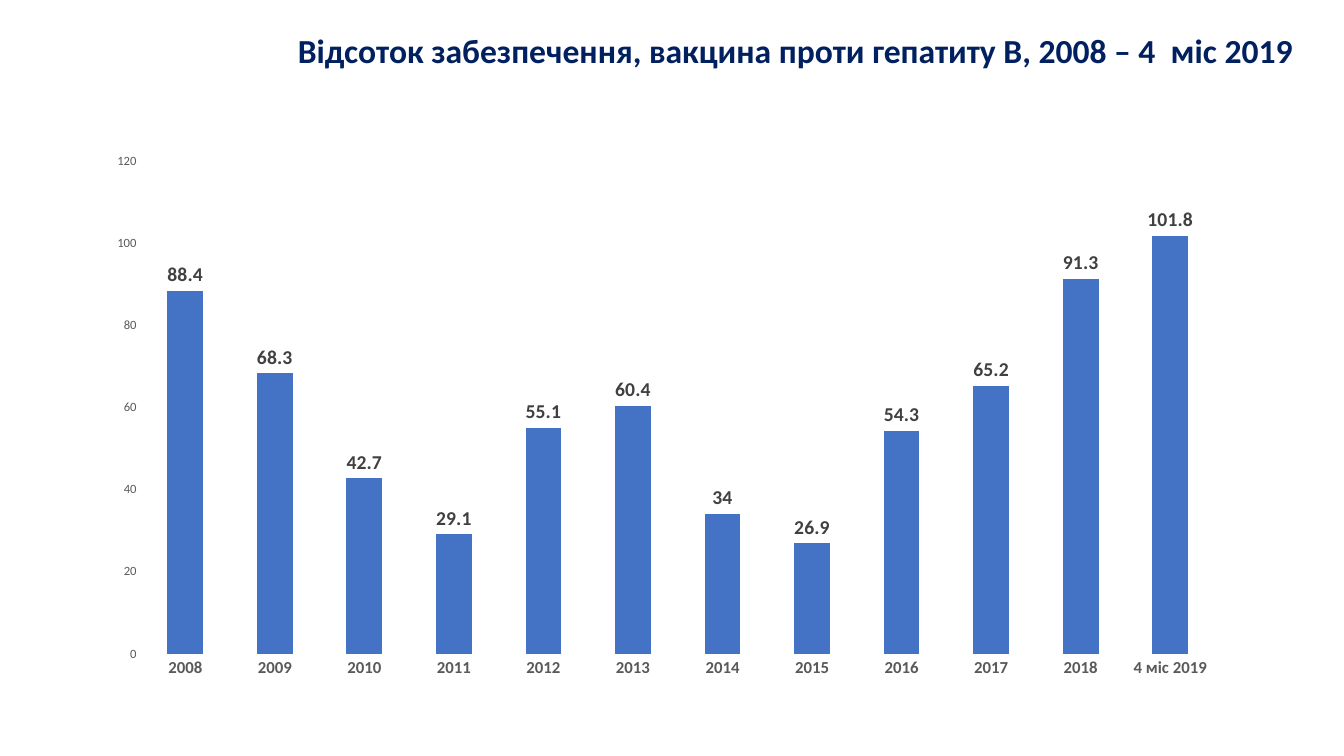
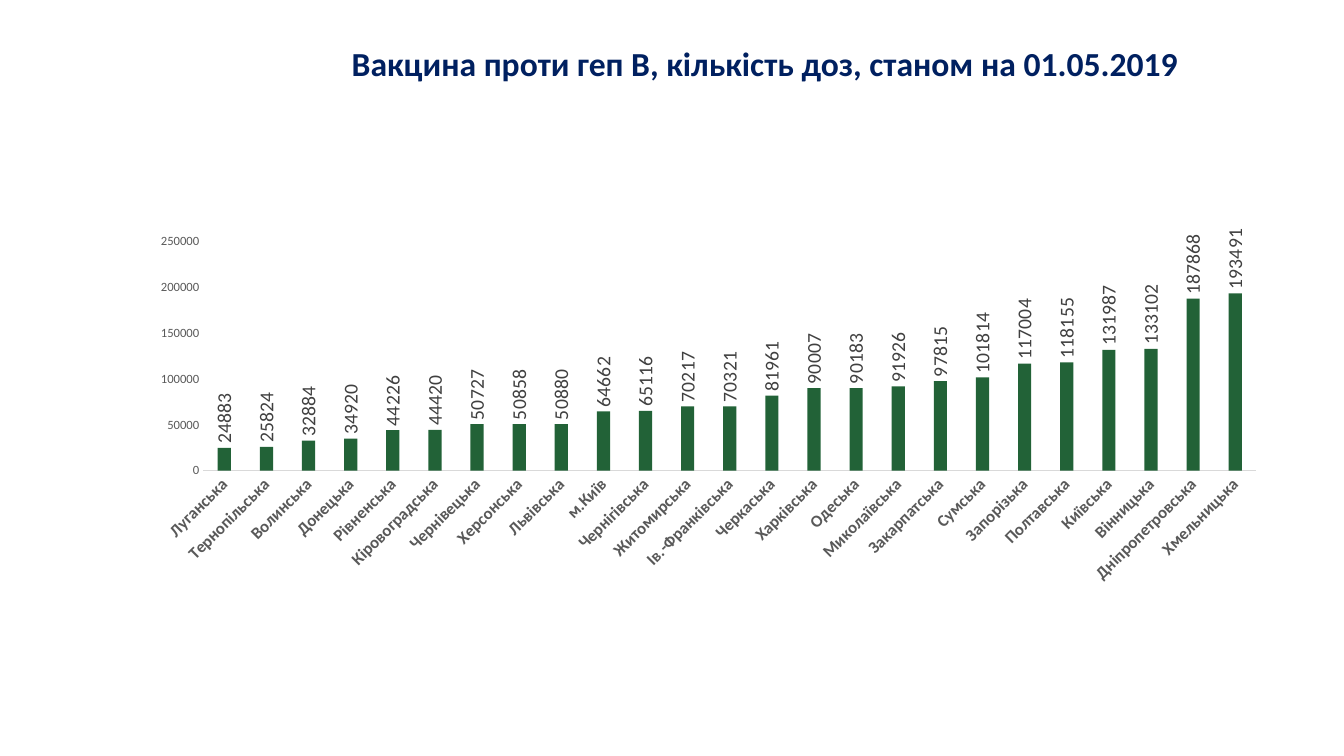
from dataclasses import dataclass

from lxml import etree
from pptx import Presentation
from pptx import util as u
from pptx.chart.data import CategoryChartData
from pptx.dml.color import RGBColor
from pptx.enum import chart as ch
from pptx.enum import text
from pptx.oxml import ns

EMU_PER_PX = 9525
TITLE_ONLY = 5


@dataclass(frozen=True)
class Theme:
    font: str = "Calibri"
    title: str = "002060"
    axis_text: str = "595959"
    label_text: str = "404040"
    axis_line: str = "D9D9D9"
    coverage: str = "4472C4"
    doses: str = "0D5324"
    title_size: int = 24
    label_size: int = 14
    category_size: int = 12
    value_size: int = 9


THEME = Theme()

COVERAGE = {
    "2008": 88.4, "2009": 68.3, "2010": 42.7, "2011": 29.1,
    "2012": 55.1, "2013": 60.4, "2014": 34, "2015": 26.9,
    "2016": 54.3, "2017": 65.2, "2018": 91.3, "4 міс 2019": 101.8,
}

DOSES = {
    "Луганська": 24883, "Тернопільська": 25824, "Волинська": 32884,
    "Донецька": 34920, "Рівненська": 44226, "Кіровоградська": 44420,
    "Чернівецька": 50727, "Херсонська": 50858, "Львівська": 50880,
    "м.Київ": 64662, "Чернігівська": 65116, "Житомирська": 70217,
    "Ів.-Франківська": 70321, "Черкаська": 81961, "Харківська": 90007,
    "Одеська": 90183, "Миколаївська": 91926, "Закарпатська": 97815,
    "Сумська": 101814, "Запорізька": 117004, "Полтавська": 118155,
    "Київська": 131987, "Вінницька": 133102, "Дніпропетровська": 187868,
    "Хмельницька": 193491,
}


def px(*lengths):
    return [u.Emu(length * EMU_PER_PX) for length in lengths]


def style_font(font, size, color, bold=False):
    font.name = THEME.font
    font.size = u.Pt(size)
    font.bold = bold
    font.color.rgb = RGBColor.from_string(color)


def set_title(slide, wording, box, align, line_spacing=1.0):
    title = slide.shapes.title
    title.left, title.top, title.width, title.height = px(*box)
    frame = title.text_frame
    frame.text = wording
    frame.word_wrap = True
    frame.auto_size = text.MSO_AUTO_SIZE.NONE
    frame.vertical_anchor = text.MSO_ANCHOR.TOP
    paragraph = frame.paragraphs[0]
    paragraph.alignment = align
    paragraph.line_spacing = line_spacing
    style_font(paragraph.font, THEME.title_size, THEME.title, bold=True)


def style_axis(axis, size, bold=False, line=None):
    axis.has_major_gridlines = False
    axis.major_tick_mark = axis.minor_tick_mark = ch.XL_TICK_MARK.NONE
    style_font(axis.tick_labels.font, size, THEME.axis_text, bold)
    if line:
        axis.format.line.color.rgb = RGBColor.from_string(line)
        axis.format.line.width = u.Pt(0.75)
    else:
        axis.format.line.fill.background()


def add_column_chart(slide, series_name, values, box, color, top, step, gap,
                     bold_labels=False, axis_line=None):
    data = CategoryChartData()
    data.categories = list(values)
    data.add_series(series_name, list(values.values()))
    chart = slide.shapes.add_chart(
        ch.XL_CHART_TYPE.COLUMN_CLUSTERED, *px(*box), data).chart
    chart.has_title = chart.has_legend = False
    chart.font.name = THEME.font

    style_axis(chart.category_axis, THEME.category_size, True, axis_line)
    style_axis(chart.value_axis, THEME.value_size)
    chart.value_axis.minimum_scale = 0
    chart.value_axis.maximum_scale = top
    chart.value_axis.major_unit = step

    plot = chart.plots[0]
    plot.gap_width = gap
    plot.vary_by_categories = False
    fill = plot.series[0].format.fill
    fill.solid()
    fill.fore_color.rgb = RGBColor.from_string(color)

    plot.has_data_labels = True
    labels = plot.data_labels
    labels.show_value = True
    labels.position = ch.XL_LABEL_POSITION.OUTSIDE_END
    style_font(labels.font, THEME.label_size, THEME.label_text, bold_labels)
    return chart


def rotate_text(chart, owner, degrees):
    """Turn the text of one chart part, named by its tag."""
    for body in chart.element.xpath(f".//{owner}/c:txPr/a:bodyPr"):
        body.set("rot", str(degrees * 60000))
        body.set("vert", "horz")


def set_opacity(chart, percent):
    for color in chart.element.xpath(".//c:ser/c:spPr/a:solidFill/a:srgbClr"):
        etree.SubElement(color, ns.qn("a:alpha"), val=str(percent * 1000))


def place_plot(chart, x, y, w, h):
    """Fix the inner plot area, in fractions of the chart."""
    area = chart.element.xpath(".//c:plotArea")[0]
    for automatic in area.xpath("./c:layout"):
        area.remove(automatic)
    layout = etree.Element(ns.qn("c:layout"))
    area.insert(0, layout)
    manual = etree.SubElement(layout, ns.qn("c:manualLayout"))
    settings = {"layoutTarget": "inner", "xMode": "edge", "yMode": "edge",
                "x": x, "y": y, "w": w, "h": h}
    for tag, value in settings.items():
        etree.SubElement(manual, ns.qn(f"c:{tag}"), val=str(value))


def add_coverage_slide(prs):
    slide = prs.slides.add_slide(prs.slide_layouts[TITLE_ONLY])
    set_title(slide,
              "Відсоток забезпечення, вакцина проти гепатиту В, 2008 – 4  міс 2019",
              (274, 28, 973, 65), text.PP_ALIGN.LEFT, line_spacing=0.9)
    add_column_chart(slide, "Відсоток забезпечення", COVERAGE,
                     (90, 136, 1089, 520), THEME.coverage,
                     top=120, step=20, gap=150, bold_labels=True)


def add_doses_slide(prs):
    slide = prs.slides.add_slide(prs.slide_layouts[TITLE_ONLY])
    set_title(slide, "Вакцина проти геп В, кількість доз, станом на 01.05.2019",
              (244, 36, 969, 48), text.PP_ALIGN.CENTER)
    chart = add_column_chart(slide, "Кількість доз", DOSES,
                             (52, 134, 1180, 507), THEME.doses,
                             top=250000, step=50000, gap=219,
                             axis_line=THEME.axis_line)
    chart.plots[0].overlap = -27
    rotate_text(chart, "c:dLbls", -90)
    rotate_text(chart, "c:catAx", -45)
    set_opacity(chart, 91)
    place_plot(chart, 0.12, 0.19, 0.85, 0.43)


def main():
    prs = Presentation()
    prs.slide_width, prs.slide_height = px(1280, 720)
    add_coverage_slide(prs)
    add_doses_slide(prs)
    prs.save("out.pptx")


if __name__ == "__main__":
    main()
